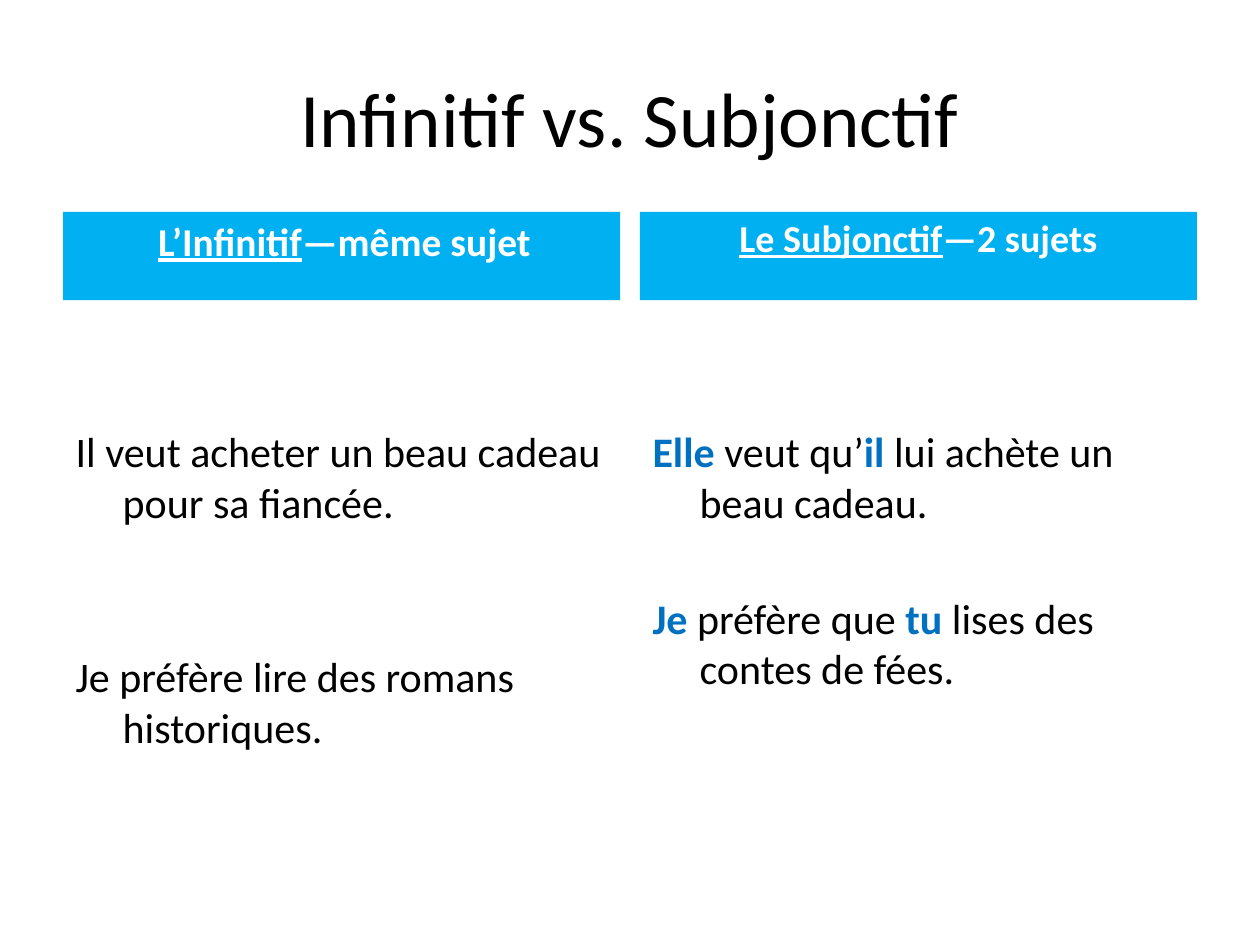
import dataclasses

import lxml.etree
import pptx
import pptx.dml.color
import pptx.enum.text
import pptx.oxml.ns
import pptx.presentation
import pptx.util

Cm = pptx.util.Cm
Pt = pptx.util.Pt
RGB = pptx.dml.color.RGBColor
Align = pptx.enum.text.PP_ALIGN
Anchor = pptx.enum.text.MSO_ANCHOR


@dataclasses.dataclass(frozen=True)
class Theme:
    font: str = "Calibri"
    ink: RGB = RGB(0, 0, 0)
    band: RGB = RGB(0x00, 0xB0, 0xF0)
    band_ink: RGB = RGB(0xFF, 0xFF, 0xFF)
    subject: RGB = RGB(0x00, 0x70, 0xC0)
    title_size: float = 44
    example_size: float = 24


@dataclasses.dataclass(frozen=True)
class Part:
    text: str
    subject: bool = False


@dataclasses.dataclass(frozen=True)
class Column:
    mood: str
    rule: str
    heading_size: float
    heading_top: float
    heading_shift: float
    examples: tuple[tuple[Part, ...], ...]
    example_gap: float


THEME = Theme()
MARGIN = 1.27
WIDTH = 22.86
COLUMN_WIDTH = 11.23
HEADING_TOP = 4.27
HEADING_HEIGHT = 1.78
EXAMPLES_HEIGHT = 10.97
SIDE_INSET = 0.25
HANGING = 0.95

COLUMNS = (
    Column("L’Infinitif", "—même sujet", 22.5, 0.1, 0.12, (
        (Part("Il veut acheter un beau cadeau pour sa fiancée."),),
        (Part("Je préfère lire des romans historiques."),),
    ), 71),
    Column("Le Subjonctif", "—2 sujets", 21.7, 0.06, 0, (
        (Part("Elle ", True), Part("veut qu’"), Part("il ", True),
         Part("lui achète un beau cadeau.")),
        (Part("Je ", True), Part("préfère que "), Part("tu ", True),
         Part("lises des contes de fées.")),
    ), 37.5),
)


def place(holder, left: float, top: float, width: float, height: float) -> None:
    holder.left, holder.top = Cm(left), Cm(top)
    holder.width, holder.height = Cm(width), Cm(height)
    holder.text_frame.auto_size = pptx.enum.text.MSO_AUTO_SIZE.NONE
    holder.text_frame.word_wrap = True


def add_run(paragraph, text: str, size: float, color: RGB,
            bold: bool = False, underline: bool = False) -> None:
    run = paragraph.add_run()
    run.text = text
    run.font.name = THEME.font
    run.font.size = Pt(size)
    run.font.color.rgb = color
    run.font.bold = bold
    run.font.underline = underline


def hang(paragraph) -> None:
    properties = paragraph._p.get_or_add_pPr()
    properties.set("marL", str(Cm(HANGING)))
    properties.set("indent", str(-Cm(HANGING)))
    lxml.etree.SubElement(properties, pptx.oxml.ns.qn("a:buNone"))


def draw_heading(holder, column: Column, left: float) -> None:
    place(holder, left, HEADING_TOP, COLUMN_WIDTH, HEADING_HEIGHT)
    holder.fill.solid()
    holder.fill.fore_color.rgb = THEME.band
    frame = holder.text_frame
    frame.vertical_anchor = Anchor.TOP
    frame.margin_top = Cm(column.heading_top)
    frame.margin_left = Cm(SIDE_INSET + column.heading_shift)
    frame.margin_right = Cm(SIDE_INSET)
    heading = frame.paragraphs[0]
    heading.alignment = Align.CENTER
    heading.space_before = Pt(0)
    add_run(heading, column.mood, column.heading_size, THEME.band_ink, True, True)
    add_run(heading, column.rule, column.heading_size, THEME.band_ink, True)


def draw_examples(holder, column: Column, left: float) -> None:
    place(holder, left, HEADING_TOP + HEADING_HEIGHT, COLUMN_WIDTH, EXAMPLES_HEIGHT)
    frame = holder.text_frame
    frame.vertical_anchor = Anchor.TOP
    frame.margin_top = Cm(2.53)
    for index, example in enumerate(column.examples):
        sentence = frame.add_paragraph() if index else frame.paragraphs[0]
        sentence.space_before = Pt(column.example_gap if index else 0)
        hang(sentence)
        for part in example:
            color = THEME.subject if part.subject else THEME.ink
            add_run(sentence, part.text, THEME.example_size, color, part.subject)


def draw_title(holder) -> None:
    place(holder, MARGIN, 0.76, WIDTH, 3.18)
    holder.text_frame.vertical_anchor = Anchor.MIDDLE
    title = holder.text_frame.paragraphs[0]
    title.alignment = Align.CENTER
    add_run(title, "Infinitif vs. Subjonctif", THEME.title_size, THEME.ink)


def main() -> None:
    deck = pptx.Presentation()
    deck.slide_width, deck.slide_height = Cm(25.4), Cm(19.05)
    slide = deck.slides.add_slide(deck.slide_layouts.get_by_name("Comparison"))
    holders = {holder.placeholder_format.idx: holder for holder in slide.placeholders}
    draw_title(slide.shapes.title)
    for index, column in enumerate(COLUMNS):
        left = MARGIN + index * (WIDTH - COLUMN_WIDTH)
        draw_heading(holders[2 * index + 1], column, left)
        draw_examples(holders[2 * index + 2], column, left)
    deck.save("out.pptx")


if __name__ == "__main__":
    main()
